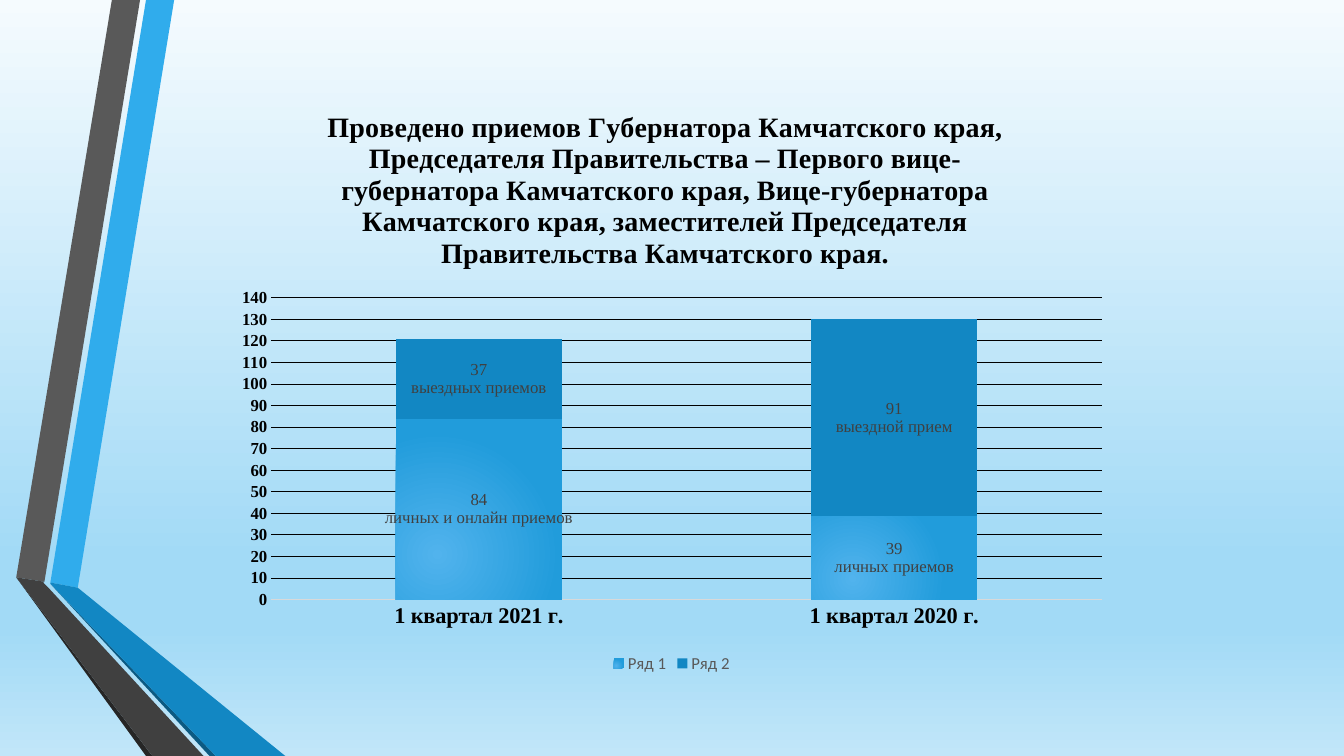
from lxml.etree import SubElement
from pptx import Presentation
from pptx.chart.data import CategoryChartData as ChartData
from pptx.dml.color import RGBColor
from pptx.enum.chart import XL_CHART_TYPE as ChartType
from pptx.enum.chart import XL_LABEL_POSITION as LabelPosition
from pptx.enum.chart import XL_LEGEND_POSITION as LegendPosition
from pptx.enum.chart import XL_TICK_MARK as TickMark
from pptx.oxml import parse_xml
from pptx.oxml.ns import nsdecls, qn
from pptx.util import Cm, Pt

BLACK = RGBColor(0x00, 0x00, 0x00)
CHARCOAL = RGBColor(0x26, 0x26, 0x26)
DARK_GREY = RGBColor(0x40, 0x40, 0x40)
GREY = RGBColor(0x59, 0x59, 0x59)
PALE_GREY = RGBColor(0xD9, 0xD9, 0xD9)
SKY_BLUE = RGBColor(0x30, 0xAC, 0xEC)
BLUE = RGBColor(0x12, 0x87, 0xC3)
NAVY = RGBColor(0x0C, 0x5A, 0x82)
GLOW_INNER = RGBColor(0x51, 0xB3, 0xED)
GLOW_OUTER = RGBColor(0x21, 0x9C, 0xDB)
PALE_SKY = RGBColor(0xF5, 0xFB, 0xFE)
MID_SKY = RGBColor(0xA2, 0xDA, 0xF6)
LOW_SKY = RGBColor(0xC1, 0xE6, 0xF9)

SERIF = "Times New Roman"
SANS = "Calibri"
TITLE_FONT = dict(name=SERIF, size=Pt(20), bold=True)
CATEGORY_FONT = dict(name=SERIF, size=Pt(16), bold=True)
VALUE_FONT = dict(name=SERIF, size=Pt(12), bold=True)
LABEL_FONT = dict(name=SERIF, size=Pt(12), bold=False)
LEGEND_FONT = dict(name=SANS, size=Pt(12), bold=False)

TITLE = (
    "Проведено приемов Губернатора Камчатского края, Председателя "
    "Правительства – Первого вице-губернатора Камчатского края, "
    "Вице-губернатора Камчатского края, заместителей Председателя "
    "Правительства Камчатского края."
)
QUARTERS = ["1 квартал 2021 г.", "1 квартал 2020 г."]
SERIES = {
    "Ряд 1": {84: "личных и онлайн приемов", 39: "личных приемов"},
    "Ряд 2": {37: "выездных приемов", 91: "выездной прием"},
}

# Outlines of the folded ribbon, in centimetres
RIBBON = [
    (SKY_BLUE, [(1.27, 14.68), (1.96, 14.81), (4.39, 0), (3.68, 0)]),
    (GREY, [(3.53, 0), (2.82, 0), (0.41, 14.55), (1.12, 14.66)]),
    (CHARCOAL, [(0.41, 14.55), (3.68, 19.05), (3.84, 19.05)]),
    (NAVY, [(1.27, 14.71), (5.28, 19.05), (5.44, 19.05)]),
    (BLUE, [(1.27, 14.71), (5.44, 19.05), (7.19, 19.05), (1.96, 14.81),
            (1.27, 14.68)]),
    (DARK_GREY, [(5.13, 19.05), (1.22, 14.81), (1.09, 14.68), (1.12, 14.66),
                 (0.41, 14.55), (3.84, 19.05)]),
]


def format_font(font, formats, color):
    for name, value in formats.items():
        setattr(font, name, value)
    font.color.rgb = color


def set_gradient(gradient, stops, direction):
    """Replace the stops and the direction of a gradient fill."""
    for child in list(gradient):
        gradient.remove(child)
    stop_list = SubElement(gradient, qn("a:gsLst"))
    for percent, color in stops:
        stop = SubElement(stop_list, qn("a:gs"), pos=str(percent * 1000))
        SubElement(stop, qn("a:srgbClr"), val=str(color))
    gradient.append(parse_xml(direction))


def paint_background(page):
    page.background.fill.gradient()
    gradient = page._element.xpath(".//p:bgPr/a:gradFill")[0]
    stops = [(0, PALE_SKY), (74, MID_SKY), (83, MID_SKY), (100, LOW_SKY)]
    set_gradient(gradient, stops,
                 f'<a:lin {nsdecls("a")} ang="5400000" scaled="0"/>')


def add_ribbon_part(page, color, points):
    corners = [(Cm(x), Cm(y)) for x, y in points]
    builder = page.shapes.build_freeform(*corners[0])
    builder.add_line_segments(corners[1:], close=True)
    part = builder.convert_to_shape()
    part.shadow.inherit = False
    part.fill.solid()
    part.fill.fore_color.rgb = color
    part.line.fill.background()


def set_layout(parent, position, **fractions):
    """Place a chart part by fractions of the chart's size."""
    for old in parent.findall(qn("c:layout")):
        parent.remove(old)
    layout = parse_xml(f'<c:layout {nsdecls("c")}><c:manualLayout/></c:layout>')
    for name, value in fractions.items():
        SubElement(layout[0], qn(f"c:{name}"), val=str(value))
    parent.insert(position, layout)


def format_title(chart):
    frame = chart.chart_title.text_frame
    frame.text = TITLE
    format_font(frame.paragraphs[0].runs[0].font, TITLE_FONT, BLACK)
    chart.chart_title.include_in_layout = False
    set_layout(chart.chart_title._element, 1,
               xMode="edge", yMode="edge", x=0.11, y=0.04)


def format_axes(chart):
    for axis, formats in ((chart.category_axis, CATEGORY_FONT),
                          (chart.value_axis, VALUE_FONT)):
        axis.major_tick_mark = axis.minor_tick_mark = TickMark.NONE
        format_font(axis.tick_labels.font, formats, BLACK)
    line = chart.category_axis.format.line
    line.color.rgb, line.width = PALE_GREY, Pt(1)
    scale = chart.value_axis
    scale.minimum_scale, scale.maximum_scale, scale.major_unit = 0, 140, 10
    scale.format.line.fill.background()
    grid = scale.major_gridlines.format.line
    grid.color.rgb, grid.width = BLACK, Pt(0.75)


def add_labels(series, captions):
    labels = series.data_labels
    labels.show_value = True
    labels.position = LabelPosition.CENTER
    format_font(labels.font, LABEL_FONT, DARK_GREY)
    for index, (value, caption) in enumerate(captions.items()):
        label = series.points[index].data_label
        frame = label.text_frame
        frame.text = f"{value}\n{caption}"
        frame.word_wrap = False
        for para in frame.paragraphs:
            for span in para.runs:
                format_font(span.font, LABEL_FONT, DARK_GREY)
        label.position = LabelPosition.CENTER


def fill_series(personal, visiting):
    personal.format.fill.gradient()
    gradient = personal._element.xpath("c:spPr/a:gradFill")[0]
    set_gradient(
        gradient, [(0, GLOW_INNER), (100, GLOW_OUTER)],
        f'<a:path {nsdecls("a")} path="circle"><a:fillToRect l="50000" '
        't="100000" r="100000" b="50000"/></a:path>')
    visiting.format.fill.solid()
    visiting.format.fill.fore_color.rgb = BLUE


def add_reception_chart(page):
    data = ChartData()
    data.categories = QUARTERS
    for name, captions in SERIES.items():
        data.add_series(name, list(captions))
    chart = page.shapes.add_chart(
        ChartType.COLUMN_STACKED, Cm(5.64), Cm(2.01), Cm(22.58), Cm(15.06),
        data).chart
    format_font(chart.font, dict(name=SANS, size=Pt(10)), BLACK)
    format_title(chart)
    format_axes(chart)

    # Columns and their labels
    plot = chart.plots[0]
    plot.gap_width, plot.overlap, plot.vary_by_categories = 150, 100, False
    fill_series(*plot.series)
    for series in plot.series:
        add_labels(series, SERIES[series.name])
    set_layout(chart._chartSpace.chart.plotArea, 0, layoutTarget="inner",
               xMode="edge", yMode="edge", x=0.053, y=0.365, w=0.927, h=0.505)

    # Legend
    chart.has_legend = True
    chart.legend.position = LegendPosition.BOTTOM
    chart.legend.include_in_layout = False
    format_font(chart.legend.font, LEGEND_FONT, GREY)


def main():
    deck = Presentation()
    deck.slide_width, deck.slide_height = Cm(33.87), Cm(19.05)
    page = deck.slides.add_slide(deck.slide_layouts[6])
    paint_background(page)
    for color, points in RIBBON:
        add_ribbon_part(page, color, points)
    add_reception_chart(page)
    deck.save("out.pptx")


if __name__ == "__main__":
    main()
